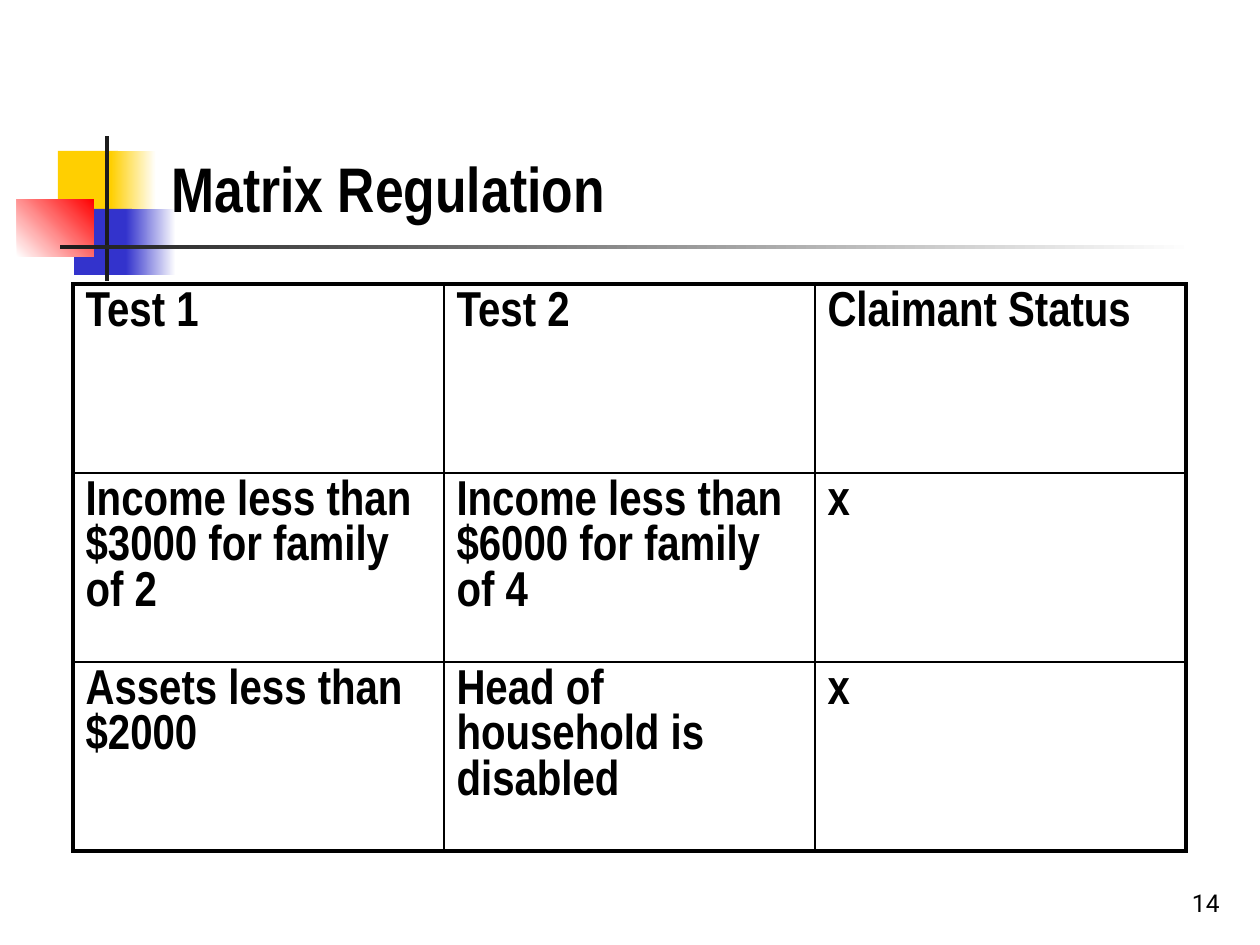
"""Build the Matrix Regulation slide."""
from dataclasses import dataclass
from typing import Optional

from lxml import etree
from pptx import Presentation
from pptx.dml.color import RGBColor
from pptx.enum import shapes, text
from pptx.oxml import ns
from pptx.util import Emu, Pt

EMU_PER_PX = 914400 / 126
BLACK = RGBColor(0x00, 0x00, 0x00)
WHITE = RGBColor(0xFF, 0xFF, 0xFF)
YELLOW = RGBColor(0xFF, 0xCF, 0x01)
BLUE = RGBColor(0x33, 0x33, 0xCC)
RED = RGBColor(0xFF, 0x00, 0x00)
CHARCOAL = RGBColor(0x1C, 0x1C, 0x1C)
HEADING_FONT = "Arial Narrow"
NUMBER_FONT = "Roboto"
OUTER_BORDER = Pt(2.25)
INNER_BORDER = Pt(1)


@dataclass(frozen=True)
class Block:
    left: int
    top: int
    width: int
    height: int
    color: RGBColor
    fade_to: Optional[RGBColor] = None
    angle: int = 0


BLOCKS = [
    Block(58, 151, 60, 66, YELLOW),
    Block(111, 151, 45, 66, YELLOW, WHITE),
    Block(74, 209, 58, 66, BLUE),
    Block(126, 209, 50, 66, BLUE, WHITE),
    Block(17, 199, 77, 58, WHITE, RED, 45),
    Block(105, 136, 4, 145, CHARCOAL),
    Block(60, 245, 1134, 4, CHARCOAL, WHITE),
]
ROWS = [
    ["Test 1", "Test 2", "Claimant Status"],
    ["Income less than $3000 for family of 2", "Income less than $6000 for family of 4", "x"],
    ["Assets less than $2000", "Head of household is disabled", "x"],
]
COLUMN_WIDTH, ROW_HEIGHT = 371, 189


def px(length: int) -> Emu:
    return Emu(round(length * EMU_PER_PX))


def add_run(paragraph, content: str, font: str, size: int, bold: bool) -> None:
    run = paragraph.add_run()
    run.text = content
    run.font.name = font
    run.font.size = Pt(size)
    run.font.bold = bold
    run.font.color.rgb = BLACK


def draw_block(slide, block: Block) -> None:
    shape = slide.shapes.add_shape(
        shapes.MSO_SHAPE.RECTANGLE,
        px(block.left), px(block.top), px(block.width), px(block.height))
    shape.shadow.inherit = False
    shape.line.fill.background()
    if block.fade_to is None:
        shape.fill.solid()
        shape.fill.fore_color.rgb = block.color
        return
    shape.fill.gradient()
    shape.fill.gradient_angle = block.angle
    for stop, color in zip(shape.fill.gradient_stops, (block.color, block.fade_to)):
        stop.color.rgb = color


def set_border(cell, side: str, width: int) -> None:
    properties = cell._tc.get_or_add_tcPr()
    line = etree.SubElement(properties, ns.qn(f"a:ln{side}"), w=str(int(width)))
    fill = etree.SubElement(line, ns.qn("a:solidFill"))
    etree.SubElement(fill, ns.qn("a:srgbClr"), val=str(BLACK))


def draw_title(slide) -> None:
    title = slide.shapes.title
    title.left, title.top, title.width, title.height = px(159), px(29), px(1074), px(202)
    slide.shapes._spTree.append(title._element)
    frame = title.text_frame
    frame.auto_size = text.MSO_AUTO_SIZE.NONE
    frame.vertical_anchor = text.MSO_ANCHOR.BOTTOM
    paragraph = frame.paragraphs[0]
    paragraph.alignment = text.PP_ALIGN.LEFT
    add_run(paragraph, "Matrix Regulation", HEADING_FONT, 36, True)


def draw_page_number(slide) -> None:
    frame = slide.shapes.add_textbox(px(970), px(861), px(262), px(63)).text_frame
    frame.word_wrap = True
    frame.vertical_anchor = text.MSO_ANCHOR.BOTTOM
    paragraph = frame.paragraphs[0]
    paragraph.alignment = text.PP_ALIGN.RIGHT
    add_run(paragraph, "14", NUMBER_FONT, 14, False)


def draw_table(slide) -> None:
    row_count, column_count = len(ROWS), len(ROWS[0])
    table = slide.shapes.add_table(
        row_count, column_count, px(73), px(284),
        px(COLUMN_WIDTH * column_count), px(ROW_HEIGHT * row_count)).table
    table.first_row = table.horz_banding = False
    for column in table.columns:
        column.width = px(COLUMN_WIDTH)
    for row_index, contents in enumerate(ROWS):
        table.rows[row_index].height = px(ROW_HEIGHT)
        for column_index, content in enumerate(contents):
            cell = table.cell(row_index, column_index)
            is_outer = {
                "L": column_index == 0,
                "R": column_index == column_count - 1,
                "T": row_index == 0,
                "B": row_index == row_count - 1,
            }
            for side, outer in is_outer.items():
                set_border(cell, side, OUTER_BORDER if outer else INNER_BORDER)
            cell.fill.background()
            add_run(cell.text_frame.paragraphs[0], content, HEADING_FONT, 28, True)


def main() -> None:
    presentation = Presentation()
    presentation.slide_width, presentation.slide_height = px(1260), px(945)
    slide = presentation.slides.add_slide(presentation.slide_layouts[5])
    for block in BLOCKS:
        draw_block(slide, block)
    draw_page_number(slide)
    draw_title(slide)
    draw_table(slide)
    presentation.save("out.pptx")


if __name__ == "__main__":
    main()
